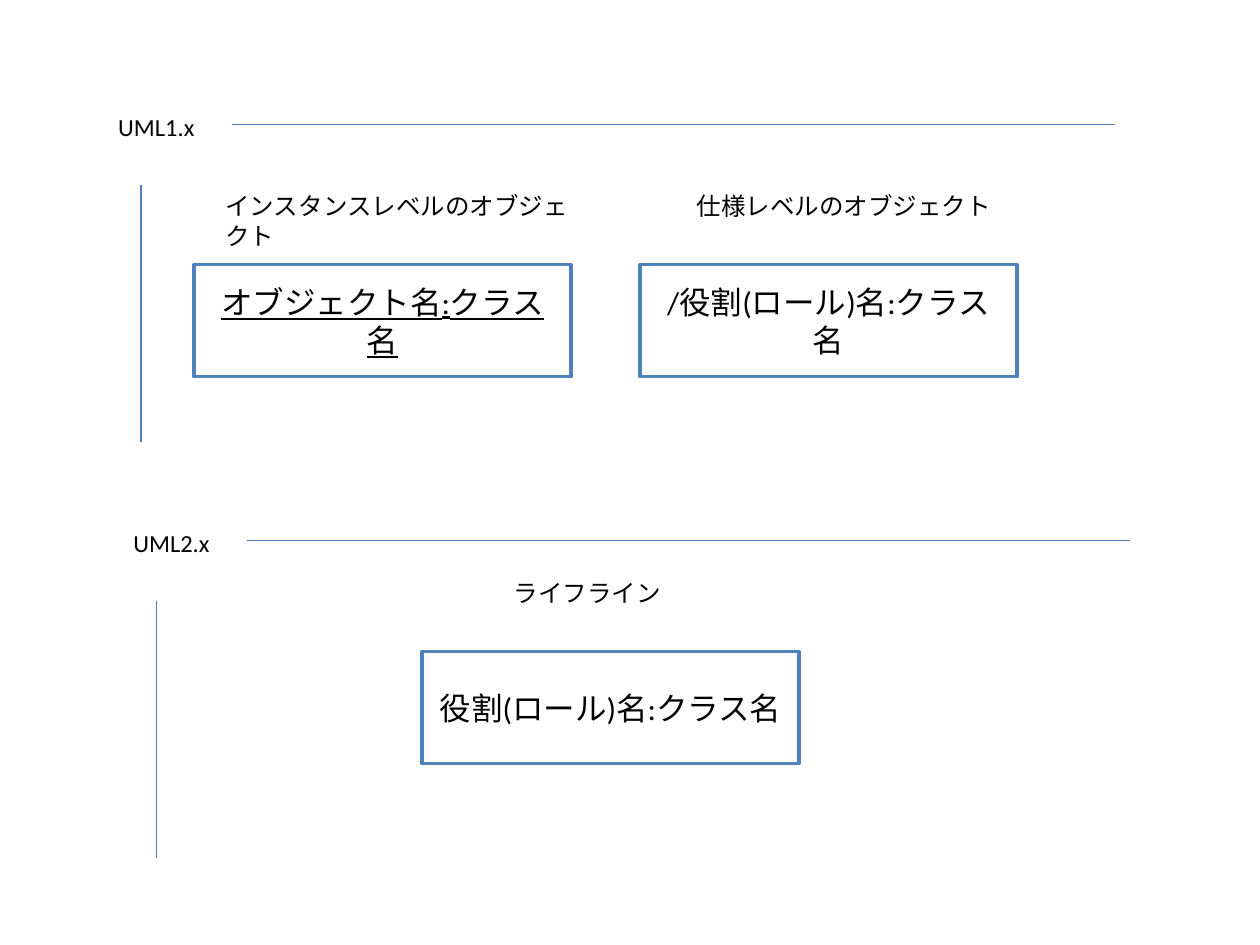
"""Build a slide comparing object notation in UML1.x and UML2.x."""
import pptx
import pptx.dml.color
import pptx.enum.shapes
import pptx.enum.text
import pptx.oxml
import pptx.util

Inches = pptx.util.Inches
Pt = pptx.util.Pt
COLORS = {"text": "000000", "box": "FFFFFF", "edge": "4F81BD", "rule": "4B7EBC"}
FONT = "Calibri"


def color(name):
    return pptx.dml.color.RGBColor.from_string(COLORS[name])


def write(shape, text, size, under=None):
    frame = shape.text_frame
    frame.word_wrap = True
    run = frame.paragraphs[0].add_run()
    run.text = text
    run.font.name = FONT
    run.font.size = Pt(size)
    run.font.underline = under
    run.font.color.rgb = color("text")
    return frame


def label(slide, text, left, top, width=1.73):
    box = slide.shapes.add_textbox(
        Inches(left), Inches(top), Inches(width), Inches(0.34))
    frame = write(box, text, 14)
    frame.auto_size = pptx.enum.text.MSO_AUTO_SIZE.SHAPE_TO_FIT_TEXT


def object_box(slide, text, left, top, under=None):
    box = slide.shapes.add_shape(
        pptx.enum.shapes.MSO_SHAPE.RECTANGLE,
        Inches(left), Inches(top), Inches(2.99), Inches(0.89))
    box.shadow.inherit = False
    box.fill.solid()
    box.fill.fore_color.rgb = color("box")
    box.line.color.rgb = color("edge")
    box.line.width = Pt(2)
    frame = write(box, text, 18, under)
    frame.vertical_anchor = pptx.enum.text.MSO_ANCHOR.MIDDLE
    frame.paragraphs[0].alignment = pptx.enum.text.PP_ALIGN.CENTER


def rule(slide, left, top, width=0, height=0):
    line = slide.shapes.add_connector(
        pptx.enum.shapes.MSO_CONNECTOR.STRAIGHT, Inches(left), Inches(top),
        Inches(left + width), Inches(top + height))
    line.line.color.rgb = color("rule")
    line.line.width = Pt(0.75)
    props = line._element.spPr
    props.append(pptx.oxml.parse_xml(
        '<a:effectLst xmlns:a='
        '"http://schemas.openxmlformats.org/drawingml/2006/main"/>'))


def section(slide, title, left, top):
    label(slide, title, left, top)
    rule(slide, left + 1, top + 0.15, width=7.01)
    rule(slide, left + 0.28, top + 0.63, height=2.04)


def main():
    deck = pptx.Presentation()
    deck.slide_width, deck.slide_height = Inches(10), Inches(7.5)
    slide = deck.slides.add_slide(deck.slide_layouts[6])

    object_box(slide, "オブジェクト名:クラス名", 1.54, 2.1, under=True)
    object_box(slide, "/役割(ロール)名:クラス名", 5.08, 2.1)
    label(slide, "インスタンスレベルのオブジェクト", 1.69, 1.47, 3.07)
    label(slide, "仕様レベルのオブジェクト", 5.43, 1.47, 2.6)

    object_box(slide, "役割(ロール)名:クラス名", 3.35, 5.17)
    label(slide, "ライフライン", 3.98, 4.54)

    section(slide, "UML1.x", 0.84, 0.84)
    section(slide, "UML2.x", 0.96, 4.14)
    deck.save("out.pptx")


if __name__ == "__main__":
    main()
